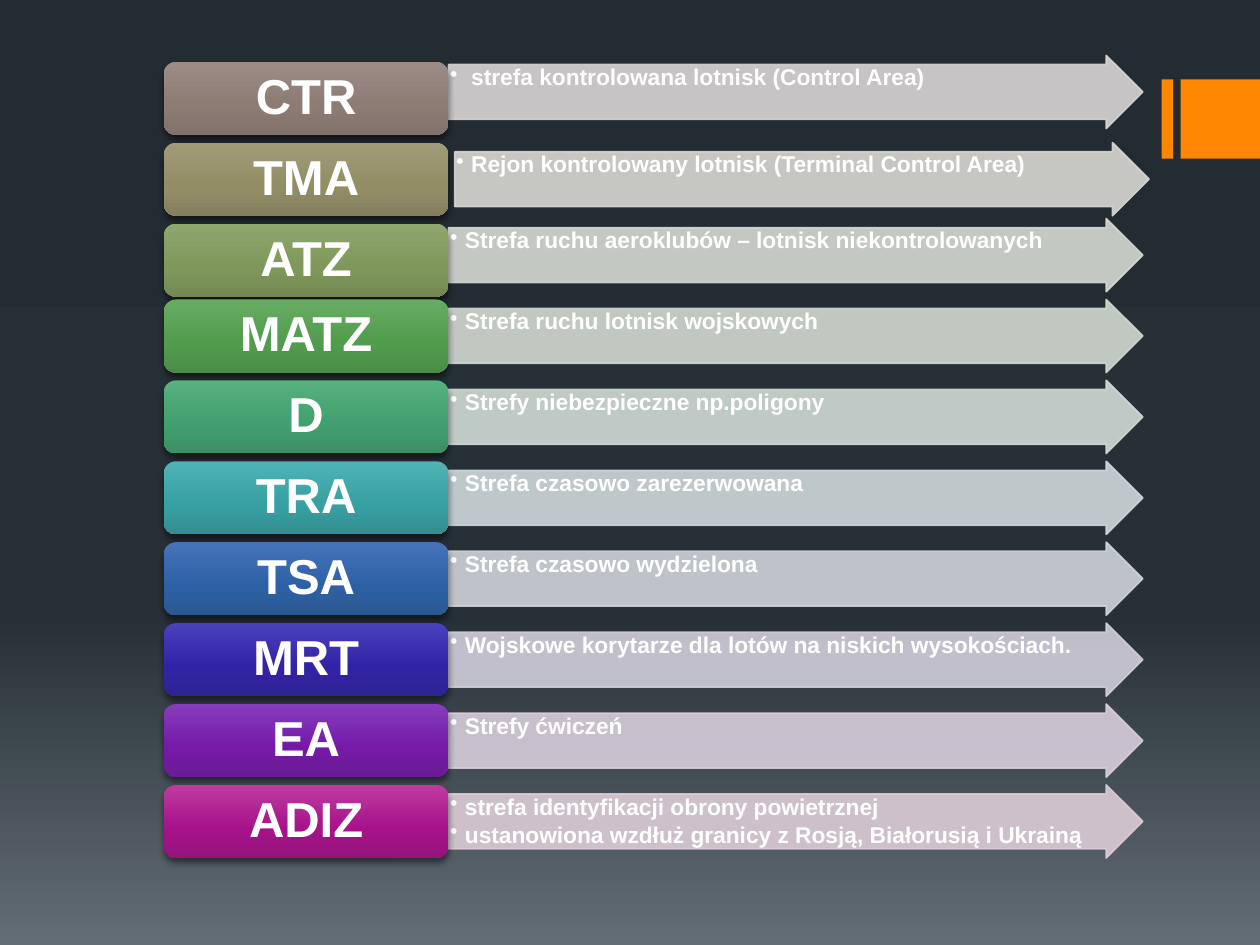
from pptx import Presentation
from pptx.dml.color import RGBColor
from pptx.enum.shapes import MSO_SHAPE as SHAPE
from pptx.enum.text import MSO_ANCHOR as ANCHOR, PP_ALIGN as ALIGN
from pptx.oxml.ns import qn
from pptx.util import Inches, Pt
from lxml.etree import SubElement

# code, descriptions, box gradient (top, middle, bottom), arrow colour
ZONES = [
    ("CTR", [" strefa kontrolowana lotnisk (Control Area)"],
     ("9B8C86", "8D7C74", "80716A"), "D8D5D4"),
    ("TMA", ["Rejon kontrolowany lotnisk (Terminal Control Area)"],
     ("A19B7A", "938D66", "847F5E"), "D8D8D3"),
    ("ATZ", ["Strefa ruchu aeroklubów – lotnisk niekontrolowanych"],
     ("8FA66E", "7F985A", "738853"), "D6D9D2"),
    ("MATZ", ["Strefa ruchu lotnisk wojskowych"],
     ("67AC63", "529C4D", "4C8C48"), "D2D9D1"),
    ("D", ["Strefy niebezpieczne np.poligony"],
     ("58B180", "429F6F", "3E8E65"), "D0DAD5"),
    ("TRA", ["Strefa czasowo zarezerwowana"],
     ("4FB3B6", "37A0A2", "358E91"), "CFD9DA"),
    ("TSA", ["Strefa czasowo wydzielona"],
     ("4772BA", "2D61A4", "2C5892"), "CFD3DB"),
    ("MRT", ["Wojskowe korytarze dla lotów na niskich wysokościach."],
     ("4941BE", "3123A6", "2F2393"), "D0CEDB"),
    ("EA", ["Strefy ćwiczeń"],
     ("873DBF", "751AA7", "691B94"), "D8CDDC"),
    ("ADIZ", ["strefa identyfikacji obrony powietrznej",
              "ustanowiona wzdłuż granicy z Rosją, Białorusią i Ukrainą"],
     ("BF3B9F", "A7128B", "94147C"), "DCCCD7"),
]
BACKGROUND = ("242C33", "273037", "636D76")
WHITE = RGBColor(0xFF, 0xFF, 0xFF)
ORANGE = RGBColor(0xFF, 0x86, 0x00)

FIRST_TOP, LAST_TOP = 0.45, 6.23
STEP = (LAST_TOP - FIRST_TOP) / (len(ZONES) - 1)
ROW_H = 0.58
BOX_LEFT, BOX_W = 1.3, 2.26
ARROW_LEFT, ARROW_W = BOX_LEFT + BOX_W, 5.51
# Rows nudged off the even grid
BOX_SHIFT = {"CTR": 0.04, "TMA": 0.04, "ATZ": 0.04}
ARROW_SHIFT = {"CTR": (0, -0.01), "TMA": (0.05, 0.04)}


def add_alpha(color_el, percent):
    SubElement(color_el, qn("a:alpha")).set("val", str(percent * 1000))


def set_gradient(fill, owner, colors, middle):
    """Fill from top to bottom with three colours, the second at middle percent."""
    fill.gradient()
    fill.gradient_angle = 270
    stops = owner.find(".//" + qn("a:gsLst"))
    for stop in list(stops):
        stops.remove(stop)
    for pos, color in zip((0, middle, 100), colors):
        gs = SubElement(stops, qn("a:gs"), pos=str(pos * 1000))
        SubElement(gs, qn("a:srgbClr"), val=color)


def add_shadow(sp):
    effects = sp._element.spPr.find(qn("a:effectLst"))
    shadow = SubElement(effects, qn("a:outerShdw"), blurRad=str(Pt(3.8)),
                        dist=str(Pt(3)), dir="5400000", rotWithShape="0")
    add_alpha(SubElement(shadow, qn("a:srgbClr"), val="000000"), 48)


def add_block(slide, kind, left, top, width, height):
    sp = slide.shapes.add_shape(kind, Inches(left), Inches(top),
                                Inches(width), Inches(height))
    sp.shadow.inherit = False
    sp.line.fill.background()
    return sp


def write(sp, lines, size, align, anchor, inset, bullet=False):
    tf = sp.text_frame
    tf.word_wrap = True
    tf.vertical_anchor = anchor
    tf.margin_left = tf.margin_right = Inches(inset[0])
    tf.margin_top = tf.margin_bottom = Inches(inset[1])
    for i, text in enumerate(lines):
        p = tf.paragraphs[0] if i == 0 else tf.add_paragraph()
        p.alignment = align
        p.line_spacing = 0.9
        if bullet:
            p.level = 1
            p.space_after = Pt(2)
            pPr = p._p.get_or_add_pPr()
            pPr.set("marL", str(Inches(0.12)))
            pPr.set("indent", str(-Inches(0.12)))
            SubElement(pPr, qn("a:buChar"), char="•")
        r = p.add_run()
        r.text = text
        r.font.name = "Arial"
        r.font.size = Pt(size)
        r.font.bold = True
        r.font.color.rgb = WHITE


def add_arrow(slide, left, top, color, lines):
    sp = add_block(slide, SHAPE.RIGHT_ARROW, left, top, ARROW_W, ROW_H)
    sp.adjustments[0], sp.adjustments[1] = 0.75, 0.5
    for fill in (sp.fill, sp.line.fill):
        fill.solid()
        fill.fore_color.rgb = RGBColor.from_string(color)
    sp.line.width = Pt(1)
    for color_el in sp._element.spPr.iter(qn("a:srgbClr")):
        add_alpha(color_el, 90)
    write(sp, lines, 13, ALIGN.LEFT, ANCHOR.TOP, (0.01, 0.01), bullet=True)


def add_code_box(slide, top, colors, code):
    sp = add_block(slide, SHAPE.ROUNDED_RECTANGLE, BOX_LEFT, top, BOX_W, ROW_H)
    set_gradient(sp.fill, sp._element, colors, 60)
    add_shadow(sp)
    write(sp, [code], 28, ALIGN.CENTER, ANCHOR.MIDDLE, (0.12, 0.06))


def main():
    prs = Presentation()
    prs.slide_width, prs.slide_height = Inches(10), Inches(7.5)
    slide = prs.slides.add_slide(prs.slide_layouts[6])
    set_gradient(slide.background.fill, slide._element, BACKGROUND, 65)

    for left, width in ((9.22, 0.09), (9.37, 0.63)):
        accent = add_block(slide, SHAPE.RECTANGLE, left, 0.63, width, 0.63)
        accent.fill.solid()
        accent.fill.fore_color.rgb = ORANGE

    for i, (code, lines, box_colors, arrow_color) in enumerate(ZONES):
        top = FIRST_TOP + i * STEP
        dx, dy = ARROW_SHIFT.get(code, (0, 0))
        add_arrow(slide, ARROW_LEFT + dx, top + dy, arrow_color, lines)
        add_code_box(slide, top + BOX_SHIFT.get(code, 0), box_colors, code)

    prs.save("out.pptx")


if __name__ == "__main__":
    main()
